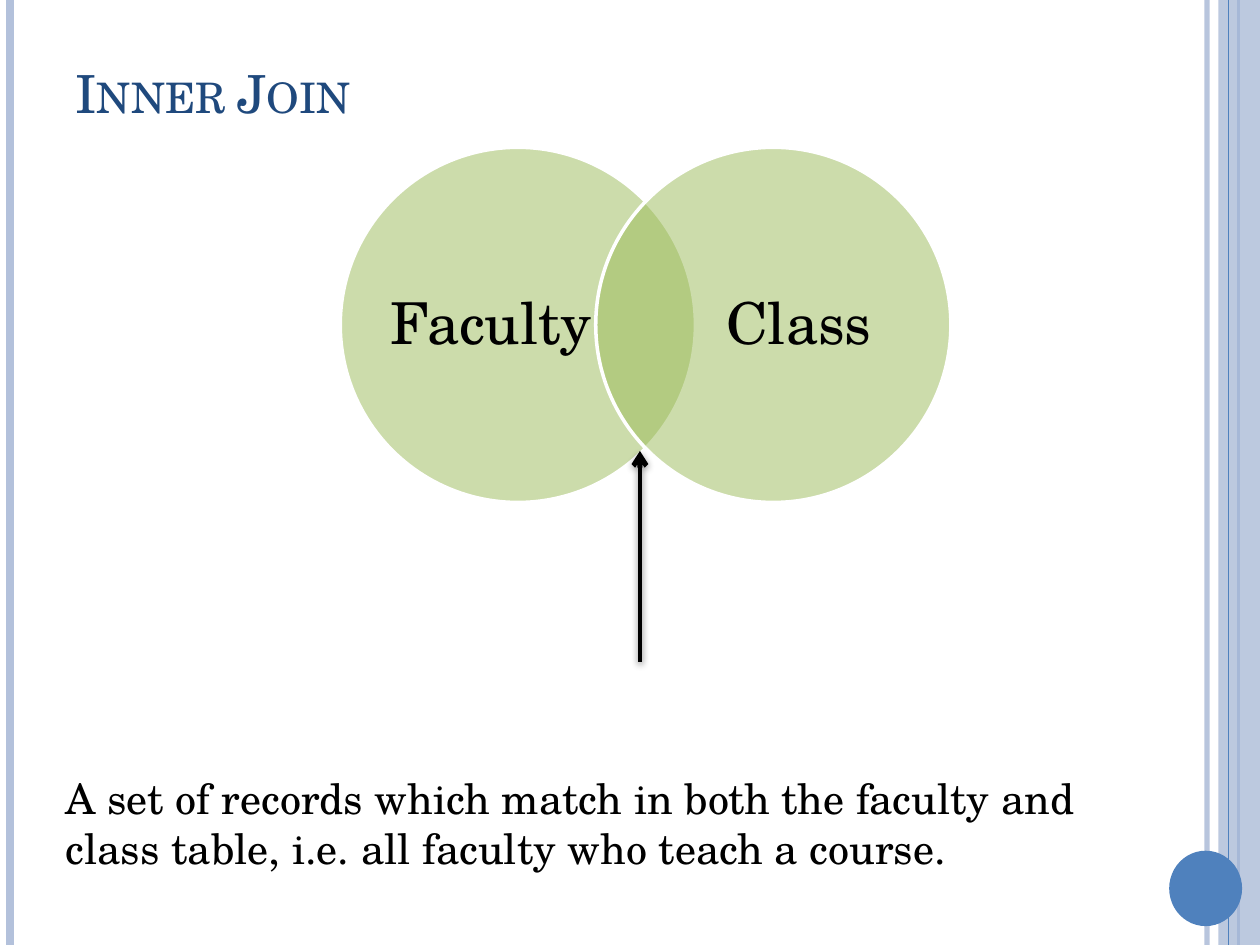
from dataclasses import dataclass

from lxml import etree
from pptx import Presentation
from pptx.dml.color import RGBColor
from pptx.enum.shapes import MSO_CONNECTOR, MSO_SHAPE
from pptx.enum.text import MSO_ANCHOR, MSO_AUTO_SIZE, PP_ALIGN
from pptx.oxml.ns import qn
from pptx.util import Cm, Pt

STRAIGHT = MSO_CONNECTOR.STRAIGHT
RECTANGLE, OVAL = MSO_SHAPE.RECTANGLE, MSO_SHAPE.OVAL
MIDDLE, TOP = MSO_ANCHOR.MIDDLE, MSO_ANCHOR.TOP
LEFT, CENTER = PP_ALIGN.LEFT, PP_ALIGN.CENTER
NO_AUTOFIT = MSO_AUTO_SIZE.NONE

FONT = "TeX Gyre Schola"
PALE, BLUE, NAVY = "B3C1DB", "4F81BD", "1F497D"
GREEN, WHITE, BLACK = "9BBB59", "FFFFFF", "000000"
WIDTH, HEIGHT = 25.4, 19.05
CIRCLE_TOP, CIRCLE_SIZE = 2.97, 7.16


@dataclass
class Box:
    left: float
    top: float
    width: float
    height: float

    def lengths(self) -> tuple:
        return Cm(self.left), Cm(self.top), Cm(self.width), Cm(self.height)


@dataclass
class Stripe:
    x: float
    color: str
    weight: float
    opacity: int = 100


@dataclass
class VennSet:
    name: str
    left: float
    label_left: float


def set_color(color_format, value: str, opacity: int = 100) -> None:
    color_format.rgb = RGBColor.from_string(value)
    if opacity < 100:
        color = color_format._xFill.find(qn("a:srgbClr"))
        etree.SubElement(color, qn("a:alpha"), val=str(opacity * 1000))


def set_fill(fill, value: str, opacity: int = 100) -> None:
    fill.solid()
    fill.fore_color.rgb = RGBColor.from_string(value)
    if opacity < 100:
        color = fill._xPr.find(qn("a:solidFill")).find(qn("a:srgbClr"))
        etree.SubElement(color, qn("a:alpha"), val=str(opacity * 1000))


def add_line(slide, x: float, start: float, end: float, stripe: Stripe):
    connector = slide.shapes.add_connector(STRAIGHT, Cm(x), Cm(start), Cm(x), Cm(end))
    connector.line.width = Pt(stripe.weight)
    set_fill(connector.line.fill, stripe.color, stripe.opacity)
    effects = etree.SubElement(connector._element.spPr, qn("a:effectLst"))
    return connector, effects


def add_stripe(slide, stripe: Stripe) -> None:
    add_line(slide, stripe.x, 0, HEIGHT, stripe)


def add_filled(slide, kind, box: Box, color: str, opacity: int = 100):
    shape = slide.shapes.add_shape(kind, *box.lengths())
    shape.shadow.inherit = False
    set_fill(shape.fill, color, opacity)
    shape.line.fill.background()
    return shape


def write_text(shape, text: str, size: float, color: str, anchor, alignment, inset=None):
    frame = shape.text_frame
    settings = {"word_wrap": True, "auto_size": NO_AUTOFIT, "vertical_anchor": anchor}
    if inset is not None:
        for side in ("left", "top", "right", "bottom"):
            settings[f"margin_{side}"] = Cm(inset)
    for name, value in settings.items():
        setattr(frame, name, value)
    paragraph = frame.paragraphs[0]
    paragraph.alignment = alignment
    run = paragraph.add_run()
    run.text = text
    for name, value in {"name": FONT, "size": Pt(size)}.items():
        setattr(run.font, name, value)
    set_fill(run.font.fill, color)
    return paragraph, run


def add_title(slide, text: str, box: Box) -> None:
    title = slide.shapes.title
    title.left, title.top, title.width, title.height = box.lengths()
    _, run = write_text(title, text, 30, NAVY, MIDDLE, LEFT)
    run._r.get_or_add_rPr().set("cap", "small")


def add_venn_set(slide, venn_set: VennSet) -> None:
    box = Box(venn_set.left, CIRCLE_TOP, CIRCLE_SIZE, CIRCLE_SIZE)
    circle = add_filled(slide, OVAL, box, GREEN, 50)
    set_fill(circle.line.fill, WHITE)
    circle.line.width = Pt(2)
    label = slide.shapes.add_textbox(*Box(venn_set.label_left, 3.84, 4.11, 5.46).lengths())
    paragraph, _ = write_text(label, venn_set.name, 33, BLACK, MIDDLE, CENTER, 0)
    paragraph.line_spacing = 0.9


def add_arrow(slide, x: float, start: float, end: float) -> None:
    connector, effects = add_line(slide, x, start, end, Stripe(x, BLACK, 2.75))
    etree.SubElement(connector.line._get_or_add_ln(), qn("a:tailEnd"), type="arrow")
    shadow = etree.SubElement(
        effects, qn("a:outerShdw"), blurRad=str(Pt(4)), dist=str(Pt(1.6)),
        dir="5400000", rotWithShape="0",
    )
    color = etree.SubElement(shadow, qn("a:srgbClr"), val=BLACK)
    etree.SubElement(color, qn("a:alpha"), val="42000")


def main() -> None:
    presentation = Presentation()
    presentation.slide_width, presentation.slide_height = Cm(WIDTH), Cm(HEIGHT)
    slide = presentation.slides.add_slide(presentation.slide_layouts[5])

    for stripe in (
        Stripe(24.33, PALE, 3, 93),
        Stripe(0.2, PALE, 4.5),
        Stripe(24.97, BLUE, 1.5),
    ):
        add_stripe(slide, stripe)
    add_filled(slide, RECTANGLE, Box(24.56, 0, 0.84, HEIGHT), PALE, 87)
    add_stripe(slide, Stripe(24.77, BLUE, 0.75))
    add_filled(slide, OVAL, Box(23.57, 17.15, 1.47, 1.52), BLUE)

    add_title(slide, "Inner Join", Box(1.27, 0.76, 22.02, 2.21))
    for venn_set in (VennSet("Faculty", 6.86, 7.85), VennSet("Class", 12.01, 14.05)):
        add_venn_set(slide, venn_set)

    note = slide.shapes.add_textbox(*Box(1.07, 15.44, 22.86, 2.31).lengths())
    write_text(
        note,
        "A set of records which match in both the faculty and class table, "
        "i.e. all faculty who teach a course.",
        24, BLACK, TOP, LEFT,
    )
    add_arrow(slide, 12.9, 13.34, 9.09)
    presentation.save("out.pptx")


if __name__ == "__main__":
    main()
